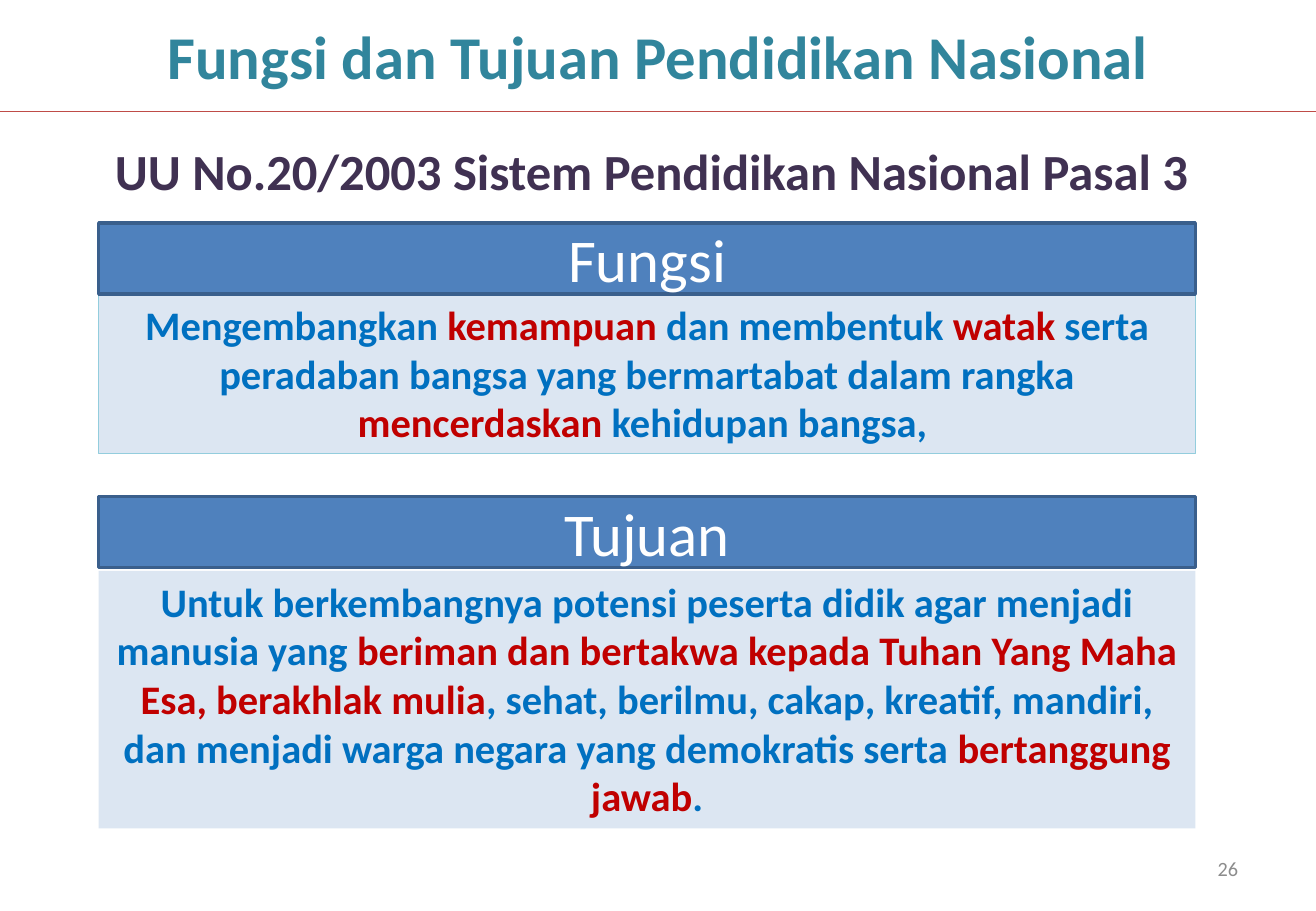
"""Build the slide on the function and goals of national education."""
import dataclasses

import pptx
import pptx.dml.color
import pptx.enum.shapes
import pptx.enum.text
import pptx.oxml
import pptx.util

Pt = pptx.util.Pt
Align = pptx.enum.text.PP_ALIGN
Anchor = pptx.enum.text.MSO_ANCHOR


@dataclasses.dataclass(frozen=True)
class Theme:
    font: str = "Calibri"
    title: str = "31859C"
    subtitle: str = "403152"
    body: str = "0070C0"
    accent: str = "C00000"
    white: str = "FFFFFF"
    number: str = "8C8C8C"
    panel: str = "DCE6F2"
    panel_line: str = "93CDDD"
    header: str = "4F81BD"
    header_line: str = "3A5F8C"
    rule: str = "BF4C48"
    title_size: int = 36
    subtitle_size: int = 30
    body_size: int = 24
    number_size: int = 12


theme = Theme()


def rgb(value):
    return pptx.dml.color.RGBColor.from_string(value)


def add_box(bounds, runs, size, bold=True, align=Align.CENTER, anchor=Anchor.TOP,
            fill=None, line=None, line_width=0.75):
    bounds = [Pt(length) for length in bounds]
    if fill:
        shape = slide.shapes.add_shape(pptx.enum.shapes.MSO_SHAPE.RECTANGLE, *bounds)
        shape.shadow.inherit = False
        shape.fill.solid()
        shape.fill.fore_color.rgb = rgb(fill)
        if line:
            shape.line.color.rgb = rgb(line)
            shape.line.width = Pt(line_width)
        else:
            shape.line.fill.background()
    else:
        shape = slide.shapes.add_textbox(*bounds)
    shape.text_frame.word_wrap = True
    shape.text_frame.vertical_anchor = anchor
    paragraph = shape.text_frame.paragraphs[0]
    paragraph.alignment = align
    for text, color in runs:
        run = paragraph.add_run()
        run.text = text
        run.font.name = theme.font
        run.font.size = Pt(size)
        run.font.bold = bold
        run.font.color.rgb = rgb(color)


presentation = pptx.Presentation()
presentation.slide_width = Pt(780)
presentation.slide_height = Pt(540)
slide = presentation.slides.add_slide(presentation.slide_layouts[6])

add_box((0, 0, 780, 66), [("Fungsi dan Tujuan Pendidikan Nasional", theme.title)],
        theme.title_size, anchor=Anchor.MIDDLE)

rule = slide.shapes.add_connector(
    pptx.enum.shapes.MSO_CONNECTOR.STRAIGHT, Pt(0), Pt(66), Pt(780), Pt(66))
rule.line.color.rgb = rgb(theme.rule)
rule.line.width = Pt(0.75)
rule._element.spPr.append(pptx.oxml.parse_xml(
    '<a:effectLst xmlns:a="http://schemas.openxmlformats.org/drawingml/2006/main"/>'))

add_box((13, 79.2, 754, 43.6),
        [("UU No.20/2003 Sistem Pendidikan Nasional Pasal 3 ", theme.subtitle)],
        theme.subtitle_size)

sections = [
    ("Fungsi", 132.3, 174.3, 94.5, theme.panel_line, [
        ("Mengembangkan ", theme.body),
        ("kemampuan ", theme.accent),
        ("dan membentuk ", theme.body),
        ("watak ", theme.accent),
        ("serta peradaban bangsa yang bermartabat dalam rangka ", theme.body),
        ("mencerdaskan ", theme.accent),
        ("kehidupan bangsa, ", theme.body),
    ]),
    ("Tujuan", 294.3, 338.4, 152.6, None, [
        ("Untuk berkembangnya potensi peserta didik agar menjadi manusia yang ", theme.body),
        ("beriman dan bertakwa kepada Tuhan Yang Maha Esa, berakhlak mulia", theme.accent),
        (", sehat, berilmu, cakap, kreatif, mandiri, dan menjadi warga negara yang "
         "demokratis serta ", theme.body),
        ("bertanggung jawab", theme.accent),
        (".", theme.body),
    ]),
]
for heading, header_top, panel_top, panel_height, panel_line, runs in sections:
    add_box((58.5, panel_top, 650, panel_height), runs, theme.body_size,
            fill=theme.panel, line=panel_line)
    add_box((58.5, header_top, 650, 42), [(heading, theme.white)], theme.title_size,
            bold=False, anchor=Anchor.MIDDLE, fill=theme.header,
            line=theme.header_line, line_width=2)

add_box((558.7, 500.4, 182.2, 28.8), [("26", theme.number)], theme.number_size,
        bold=False, align=Align.RIGHT, anchor=Anchor.MIDDLE)

presentation.save("out.pptx")
